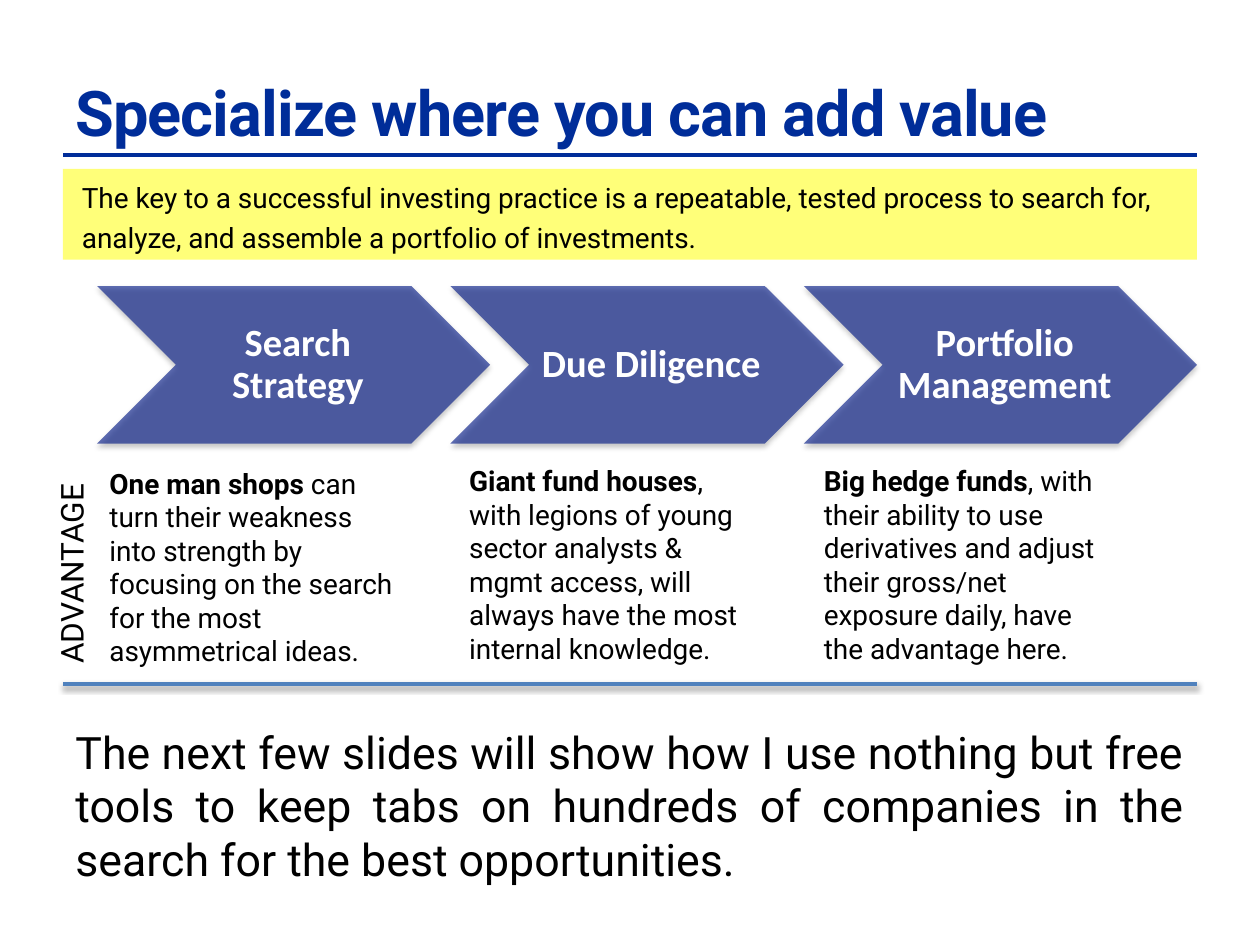
from dataclasses import dataclass

from lxml.etree import SubElement
from pptx import Presentation
from pptx.dml.color import RGBColor
from pptx.enum.shapes import MSO_CONNECTOR as CONN, MSO_SHAPE as SHAPE
from pptx.enum.text import MSO_ANCHOR as ANCHOR, PP_ALIGN as ALIGN
from pptx.oxml.ns import qn
from pptx.util import Inches, Pt


@dataclass(frozen=True)
class Theme:
    font: str = "Roboto"
    label_font: str = "Calibri"
    navy: str = "002D99"
    arrow: str = "031A87"
    rule: str = "4F81BD"
    yellow: str = "FFFF79"
    black: str = "000000"
    white: str = "FFFFFF"
    title: float = 36
    closing: float = 25.5
    label: float = 22
    side: float = 18
    body: float = 16


T = Theme()
TITLE = "Specialize where you can add value"
KEY = ("The key to a successful investing practice is a repeatable, tested process "
       "to search for, analyze, and assemble a portfolio of investments.")
SIDE = "ADVANTAGE"
# stage, who has the advantage, why, nudge of the note (right, down)
STAGES = [
    ("Search Strategy", "One man shops",
     " can turn their weakness into strength by focusing on the search "
     "for the most asymmetrical ideas.", (0, 0.02)),
    ("Due Diligence", "Giant fund houses",
     ", with legions of young sector analysts & mgmt access, will always "
     "have the most internal knowledge.", (0.05, 0)),
    ("Portfolio Management", "Big hedge funds",
     ", with their ability to use derivatives and adjust their gross/net "
     "exposure daily, have the advantage here.", (0.06, 0)),
]
CLOSING = ("The next few slides will show how I use nothing but free tools to keep tabs "
           "on hundreds of companies in the search for the best opportunities.")

W, H = 10, 7.5
MARGIN = 0.05 * W
WIDE = W - 2 * MARGIN
ARROW_W, ARROW_H, ARROW_TOP = 3.12, 1.25, 2.27
FIRST = 0.77
STEP = (W - MARGIN - ARROW_W - FIRST) / (len(STAGES) - 1)
NOTE_TOP, NOTE_W, NOTE_H = 3.63, 2.48, 1.72


def rgb(color):
    return RGBColor.from_string(color)


def write(sp, runs, size=T.body, font=T.font, color=T.black, align=ALIGN.LEFT,
          anchor=ANCHOR.TOP, spacing=None, insets=(0.1, 0.05, 0.1, 0.05), track=None):
    """Fill a shape with one paragraph of (text, bold) runs."""
    tf = sp.text_frame
    tf.word_wrap = True
    tf.vertical_anchor = anchor
    tf.margin_left, tf.margin_top, tf.margin_right, tf.margin_bottom = map(Inches, insets)
    p = tf.paragraphs[0]
    p.alignment = align
    if spacing:
        p.line_spacing = spacing
    for text, bold in runs:
        r = p.add_run()
        r.text = text
        r.font.name, r.font.size, r.font.bold = font, Pt(size), bold
        r.font.color.rgb = rgb(color)
        if track:
            r.font._element.set("spc", str(int(track * 100)))


def text_box(s, box, runs, **fmt):
    sp = s.shapes.add_textbox(*map(Inches, box))
    write(sp, runs, **fmt)
    return sp


def block(s, kind, box, color):
    sp = s.shapes.add_shape(kind, *map(Inches, box))
    sp.shadow.inherit = False
    sp.fill.solid()
    sp.fill.fore_color.rgb = rgb(color)
    sp.line.fill.background()
    return sp


def set_alpha(color_el, percent):
    SubElement(color_el, qn("a:alpha"), val=str(percent * 1000))


def drop_shadow(effects, alpha, blur, dist):
    sh = SubElement(effects, qn("a:outerShdw"), blurRad=str(Pt(blur)), dist=str(Pt(dist)),
                    dir="5400000", rotWithShape="0")
    set_alpha(SubElement(sh, qn("a:srgbClr"), val=T.black), alpha)


def rule(s, y, color):
    """Draw a full-width line and return its empty effect list."""
    ln = s.shapes.add_connector(CONN.STRAIGHT, *map(Inches, (MARGIN, y, W - MARGIN, y)))
    ln.line.color.rgb = rgb(color)
    ln.line.width = Pt(2)
    return SubElement(ln._element.spPr, qn("a:effectLst"))


def stage(s, i, name, who, why, nudge):
    left = FIRST + i * STEP
    sp = block(s, SHAPE.CHEVRON, (left, ARROW_TOP, ARROW_W, ARROW_H), T.arrow)
    pr = sp._element.spPr
    set_alpha(pr.find(qn("a:solidFill")).find(qn("a:srgbClr")), 63)
    drop_shadow(pr.find(qn("a:effectLst")), 35, 3.1, 1.8)
    point = ARROW_H / 2
    text_box(s, (left + point, ARROW_TOP, ARROW_W - 2 * point, ARROW_H), [(name, True)],
             size=T.label, font=T.label_font, color=T.white, align=ALIGN.CENTER,
             anchor=ANCHOR.MIDDLE, spacing=0.9, insets=(0.1, 0.03, 0.03, 0.03))
    dx, dy = nudge
    text_box(s, (left + dx, NOTE_TOP + dy, NOTE_W, NOTE_H), [(who, True), (why, False)])


def main():
    prs = Presentation()
    prs.slide_width, prs.slide_height = Inches(W), Inches(H)
    s = prs.slides.add_slide(prs.slide_layouts[6])

    rule(s, 1.23, T.navy)
    text_box(s, (MARGIN, 0.26, WIDE, 1.25), [(TITLE, True)], size=T.title,
             color=T.navy, anchor=ANCHOR.MIDDLE, track=-0.5)
    key = block(s, SHAPE.RECTANGLE, (MARGIN, 1.34, WIDE, 0.72), T.yellow)
    write(key, [(KEY, False)], anchor=ANCHOR.MIDDLE, spacing=1.2, insets=(0.15,) * 4)

    for i, row in enumerate(STAGES):
        stage(s, i, *row)

    drop_shadow(rule(s, 5.43, T.rule), 38, 3.1, 1.6)
    side = text_box(s, (-0.36, 4.24, 1.85, 0.4), [(SIDE, False)], size=T.side)
    side.rotation = 270
    text_box(s, (MARGIN, 5.7, WIDE, 1.41), [(CLOSING, False)], size=T.closing,
             align=ALIGN.JUSTIFY)
    prs.save("out.pptx")


if __name__ == "__main__":
    main()
